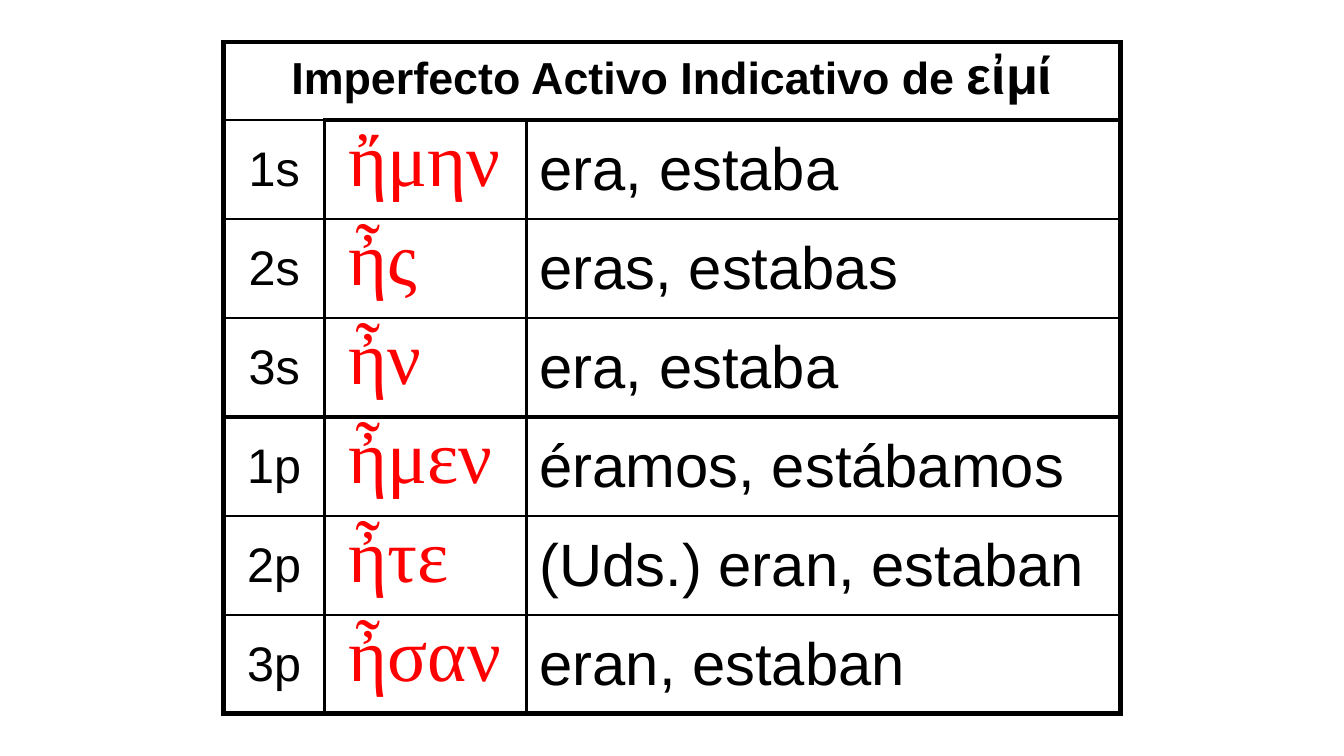
from dataclasses import dataclass
from typing import Any

import pptx
import pptx.dml.color
import pptx.enum.text
import pptx.oxml
import pptx.oxml.ns
import pptx.util

Inches = pptx.util.Inches
Align = pptx.enum.text.PP_ALIGN
Anchor = pptx.enum.text.MSO_ANCHOR

COLORS = {"ink": "000000", "greek": "FF0000"}
SLIDE_WIDTH = 10
SLIDE_HEIGHT = SLIDE_WIDTH * 9 / 16
COLUMN_WIDTHS = [0.75, 1.5, 4.42]
TABLE_WIDTH = sum(COLUMN_WIDTHS)
TABLE_HEIGHT = 5
HEADER_HEIGHT = 0.58
HORIZONTAL_RULES = [3, 2, 1, 1, 2, 1, 1, 3]
VERTICAL_RULES = [3, 2, 2, 3]


@dataclass(frozen=True)
class CellStyle:
    font: dict[str, Any]
    color: str
    align: Any
    anchor: Any
    insets: tuple[float, float, float, float]
    indent: tuple[float, float]


@dataclass(frozen=True)
class Conjugation:
    person: str
    greek: str
    spanish: str


def font_format(name: str, size: int, bold: bool = False) -> dict[str, Any]:
    return {"name": name, "size": pptx.util.Pt(size), "bold": bold}


EVEN_INSETS = (0.1, 0.04, 0.1, 0.04)
HANGING = (0.38, -0.38)
TITLE = CellStyle(font_format("Arial", 24, True), "ink", Align.CENTER, Anchor.TOP, EVEN_INSETS, HANGING)
TITLE_GREEK = font_format("Arial", 28, True)
COLUMN_STYLES = [
    CellStyle(font_format("Arial", 26), "ink", Align.CENTER, Anchor.MIDDLE, EVEN_INSETS, HANGING),
    CellStyle(font_format("Times New Roman", 40), "greek", Align.LEFT, Anchor.TOP, (0.08, 0, 0.07, 0), (0, 0.1)),
    CellStyle(font_format("Arial", 32), "ink", Align.LEFT, Anchor.MIDDLE, EVEN_INSETS, HANGING),
]
CONJUGATIONS = [
    Conjugation("1s", "ἤμην", "era, estaba"),
    Conjugation("2s", "ἦς", "eras, estabas"),
    Conjugation("3s", "ἦν", "era, estaba"),
    Conjugation("1p", "ἦμεν", "éramos, estábamos"),
    Conjugation("2p", "ἦτε", "(Uds.) eran, estaban"),
    Conjugation("3p", "ἦσαν", "eran, estaban"),
]


def set_attributes(target: Any, values: dict[str, Any]) -> None:
    for name, value in values.items():
        setattr(target, name, value)


def set_borders(cell: Any, left: float, right: float, top: float, bottom: float) -> None:
    properties = cell._tc.get_or_add_tcPr()
    for side, width in zip("LRTB", (left, right, top, bottom)):
        properties.append(pptx.oxml.parse_xml(
            f'<a:ln{side} {pptx.oxml.ns.nsdecls("a")} w="{pptx.util.Pt(width)}">'
            f'<a:solidFill><a:srgbClr val="{COLORS["ink"]}"/></a:solidFill>'
            f'<a:prstDash val="solid"/></a:ln{side}>'
        ))
    cell.fill.background()


def add_run(paragraph: Any, text: str, font: dict[str, Any], color: str) -> None:
    run = paragraph.add_run()
    run.text = text
    set_attributes(run.font, font)
    run.font.color.rgb = pptx.dml.color.RGBColor.from_string(COLORS[color])


def fill_cell(cell: Any, text: str, style: CellStyle) -> Any:
    sides = ("margin_left", "margin_top", "margin_right", "margin_bottom")
    set_attributes(cell, {side: Inches(inset) for side, inset in zip(sides, style.insets)})
    cell.vertical_anchor = style.anchor
    paragraph = cell.text_frame.paragraphs[0]
    paragraph.alignment = style.align
    properties = paragraph._p.get_or_add_pPr()
    for name, length in zip(("marL", "indent"), style.indent):
        properties.set(name, str(Inches(length)))
    add_run(paragraph, text, style.font, style.color)
    return paragraph


def add_conjugation_table(slide: Any) -> None:
    row_height = (TABLE_HEIGHT - HEADER_HEIGHT) / len(CONJUGATIONS)
    heights = [HEADER_HEIGHT] + [row_height] * len(CONJUGATIONS)
    table = slide.shapes.add_table(
        len(heights), len(COLUMN_WIDTHS),
        Inches((SLIDE_WIDTH - TABLE_WIDTH) / 2), Inches((SLIDE_HEIGHT - TABLE_HEIGHT) / 2),
        Inches(TABLE_WIDTH), Inches(TABLE_HEIGHT),
    ).table
    set_attributes(table, {"first_row": False, "horz_banding": False})
    for column, width in zip(table.columns, COLUMN_WIDTHS):
        column.width = Inches(width)
    for row, height in zip(table.rows, heights):
        row.height = Inches(height)

    header = table.cell(0, 0)
    header.merge(table.cell(0, len(COLUMN_WIDTHS) - 1))
    for column_index in range(len(COLUMN_WIDTHS)):
        set_borders(table.cell(0, column_index), 3, 3, 3, 1.5)
    title = fill_cell(header, "Imperfecto Activo Indicativo de ", TITLE)
    add_run(title, "εἰμί", TITLE_GREEK, "ink")

    for row_index, entry in enumerate(CONJUGATIONS, start=1):
        texts = (entry.person, entry.greek, entry.spanish)
        for column_index, (text, style) in enumerate(zip(texts, COLUMN_STYLES)):
            cell = table.cell(row_index, column_index)
            top = 1.5 if (row_index, column_index) == (1, 0) else HORIZONTAL_RULES[row_index]
            set_borders(
                cell, VERTICAL_RULES[column_index], VERTICAL_RULES[column_index + 1],
                top, HORIZONTAL_RULES[row_index + 1],
            )
            fill_cell(cell, text, style)


def main() -> None:
    presentation = pptx.Presentation()
    set_attributes(presentation, {"slide_width": Inches(SLIDE_WIDTH), "slide_height": Inches(SLIDE_HEIGHT)})
    slide = presentation.slides.add_slide(presentation.slide_layouts[6])
    add_conjugation_table(slide)
    presentation.save("out.pptx")


if __name__ == "__main__":
    main()
